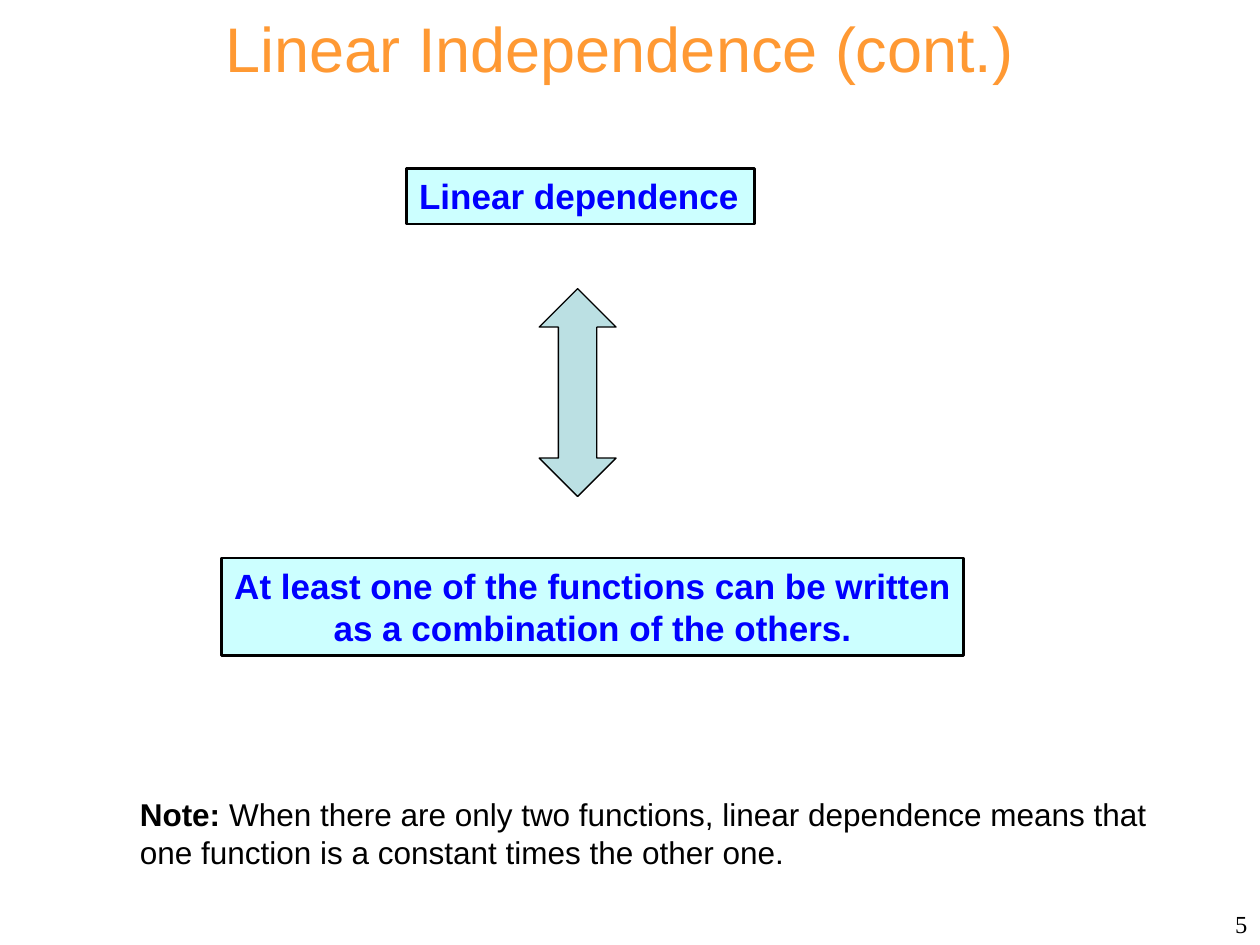
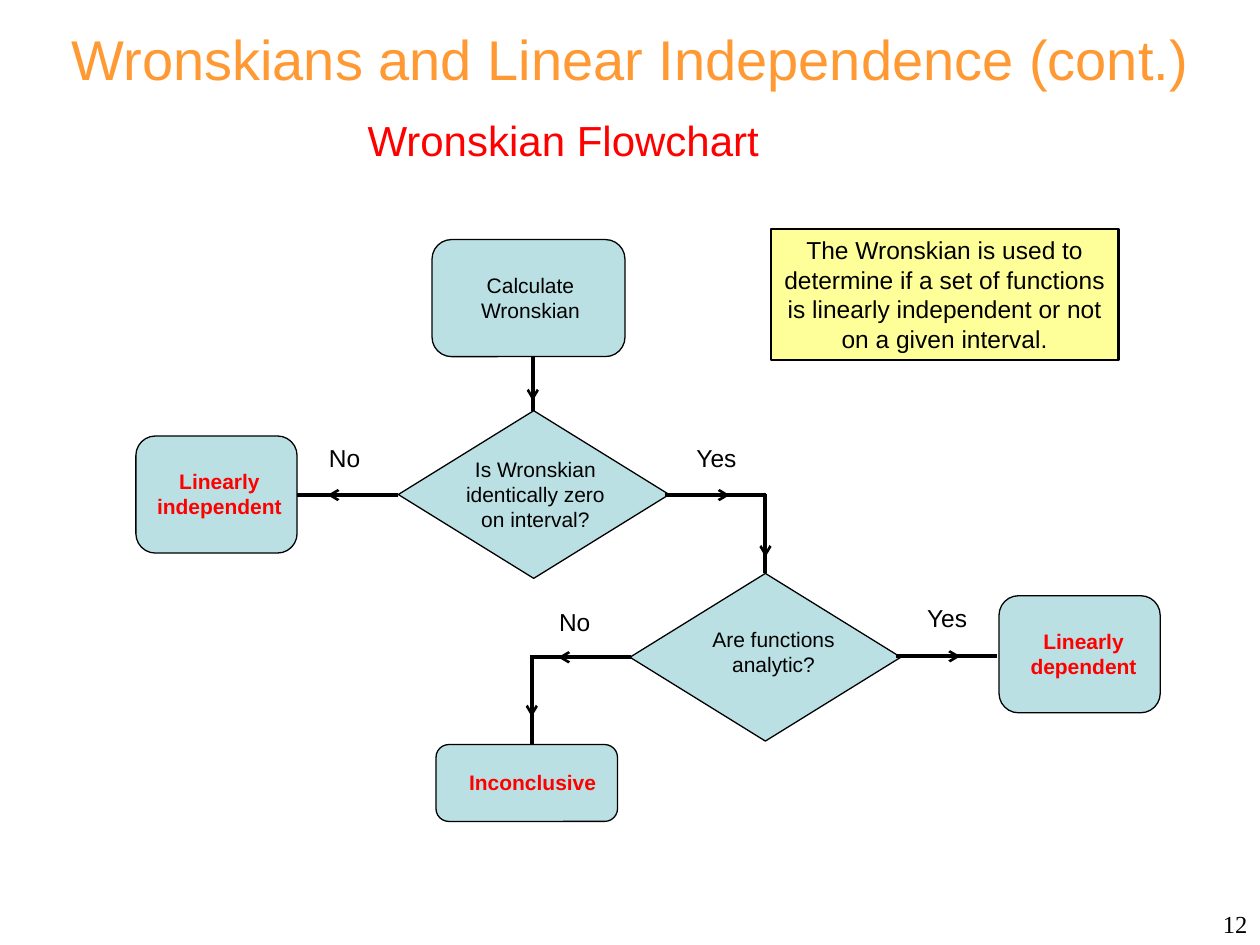
import pptx
import pptx.dml.color
import pptx.enum.shapes
import pptx.enum.text
import pptx.oxml.ns
import pptx.util
from dataclasses import dataclass
from lxml import etree
from typing import NamedTuple

Cm = pptx.util.Cm
Pt = pptx.util.Pt
Kind = pptx.enum.shapes.MSO_SHAPE
Align = pptx.enum.text.PP_ALIGN
Anchor = pptx.enum.text.MSO_ANCHOR
Fit = pptx.enum.text.MSO_AUTO_SIZE
qn = pptx.oxml.ns.qn

ORANGE = "FF9933"
BLACK = "000000"
RED = "FF0000"
BLUE = "0000FF"
TEAL = "BBE0E3"
CYAN = "CCFFFF"
YELLOW = "FFFF99"


class Box(NamedTuple):
    """Left, top, width and height in centimetres."""
    x: float
    y: float
    w: float
    h: float

    def place(self) -> tuple:
        return tuple(Cm(side) for side in self)


@dataclass
class Style:
    size: float
    color: str = BLACK
    bold: bool = False
    font: str = "Arial"
    align: Align = Align.LEFT
    wrap: bool = True


TITLE = Style(36, ORANGE, align=Align.CENTER)
LONG = Style(32, ORANGE, align=Align.CENTER)
HEAD = Style(24, RED, wrap=False)
FOOT = Style(14, font="Times New Roman", align=Align.RIGHT)
TERM = Style(20, BLUE, True, wrap=False)
CLAIM = Style(20, BLUE, True, align=Align.CENTER)
NOTE = Style(18)
STEP = Style(12, align=Align.CENTER)
RESULT = Style(12, RED, True, align=Align.CENTER)
BRANCH = Style(14, wrap=False)
REMARK = Style(14, align=Align.CENTER)


@dataclass
class Node:
    kind: Kind
    box: Box
    text: str
    area: Box
    style: Style


class Link(NamedTuple):
    """A line with a short arrow that begins `lead` after its start."""
    x1: float
    y1: float
    x2: float
    y2: float
    lead: float


STEM = 0.89
ROUND = Kind.FLOWCHART_ALTERNATE_PROCESS
TEST = Kind.FLOWCHART_DECISION

NODES = [
    Node(ROUND, Box(8.71, 4.83, 3.89, 2.36), "Calculate Wronskian",
         Box(9.02, 5.36, 3.35, 1.27), STEP),
    Node(TEST, Box(8.03, 8.28, 5.46, 3.38),
         "Is Wronskian identically zero on interval?",
         Box(9.12, 9.07, 3.35, 1.8), STEP),
    Node(TEST, Box(12.7, 11.56, 5.46, 3.38), "Are functions analytic?",
         Box(13.92, 12.5, 3.35, 1.27), STEP),
    Node(ROUND, Box(2.74, 8.79, 3.25, 2.36), "Linearly independent",
         Box(2.9, 9.32, 3.05, 1.27), RESULT),
    Node(ROUND, Box(20.14, 12.01, 3.25, 2.36), "Linearly dependent",
         Box(20.32, 12.55, 3.05, 1.27), RESULT),
    Node(ROUND, Box(8.79, 15.01, 3.66, 1.55), "Inconclusive",
         Box(9.09, 15.39, 3.3, 0.76), RESULT),
]

LINKS = [
    Link(10.74, 7.19, 10.74, 8.28, 0),
    Link(8.03, 9.98, 5.99, 9.98, 0.54),
    Link(13.41, 9.98, 15.44, 9.98, 0.41),
    Link(15.43, 9.96, 15.43, 11.56, 0.38),
    Link(18.06, 13.23, 20.09, 13.23, 0.41),
    Link(12.73, 13.25, 10.69, 13.25, 0.59),
    Link(10.72, 13.23, 10.72, 14.99, 0.33),
]

BRANCHES = [
    ("No", Box(6.38, 8.81, 1.14, 0.86)),
    ("Yes", Box(13.79, 8.81, 1.32, 0.86)),
    ("No", Box(11.02, 12.12, 1.14, 0.86)),
    ("Yes", Box(18.44, 12.04, 1.32, 0.86)),
]


def rgb(code: str) -> pptx.dml.color.RGBColor:
    return pptx.dml.color.RGBColor.from_string(code)


def write(shape, text: str, style: Style, lead: str = "") -> None:
    """Fill a shape with one paragraph, after an optional bold lead."""
    frame = shape.text_frame
    frame.word_wrap = style.wrap
    frame.auto_size = Fit.NONE
    para = frame.paragraphs[0]
    para.text = lead
    para.add_run().text = text
    para.alignment = style.align
    for run in para.runs:
        run.font.name = style.font
        run.font.size = Pt(style.size)
        run.font.bold = style.bold
        run.font.color.rgb = rgb(style.color)
    if lead:
        para.runs[0].font.bold = True


def add_text(slide, box: Box, text: str, style: Style, lead: str = "") -> None:
    write(slide.shapes.add_textbox(*box.place()), text, style, lead)


def add_shape(slide, kind: Kind, box: Box, fill: str, width: float = 0.75):
    shape = slide.shapes.add_shape(kind, *box.place())
    shape.shadow.inherit = False
    shape.fill.solid()
    shape.fill.fore_color.rgb = rgb(fill)
    shape.line.color.rgb = rgb(BLACK)
    shape.line.width = Pt(width)
    return shape


def add_panel(slide, box: Box, fill: str, text: str, style: Style) -> None:
    shape = add_shape(slide, Kind.RECTANGLE, box, fill, 1.5)
    write(shape, text, style)
    shape.text_frame.vertical_anchor = Anchor.TOP


def add_line(slide, ends: tuple, width: float, arrow: bool = False) -> None:
    line = slide.shapes.add_connector(
        pptx.enum.shapes.MSO_CONNECTOR.STRAIGHT, *(Cm(end) for end in ends))
    line.line.color.rgb = rgb(BLACK)
    line.line.width = Pt(width)
    props = line.element.spPr
    if arrow:
        etree.SubElement(props.get_or_add_ln(), qn("a:tailEnd"), type="arrow")
    etree.SubElement(props, qn("a:effectLst"))


def add_link(slide, link: Link) -> None:
    x1, y1, x2, y2, lead = link
    size = abs(x2 - x1) + abs(y2 - y1)
    dx, dy = (x2 - x1) / size, (y2 - y1) / size
    stop = lead + STEM
    add_line(slide, (x1, y1, x2, y2), 2.25)
    add_line(slide, (x1 + dx * lead, y1 + dy * lead,
                     x1 + dx * stop, y1 + dy * stop), 1.5, True)


def add_node(slide, node: Node) -> None:
    add_shape(slide, node.kind, node.box, TEAL)
    add_text(slide, node.area, node.text, node.style)


def add_slide(deck, title: str, box: Box, style: Style, number: int):
    slide = deck.slides.add_slide(deck.slide_layouts[5])
    head = slide.shapes.title
    head.left, head.top, head.width, head.height = box.place()
    write(head, title, style)
    head.text_frame.vertical_anchor = Anchor.MIDDLE
    add_text(slide, Box(19.48, 18.21, 5.92, 0.84), str(number), FOOT)
    return slide


def add_meaning(deck) -> None:
    slide = add_slide(deck, "Linear Independence (cont.)",
                      Box(1.7, 0, 21.59, 1.9), TITLE, 5)
    add_panel(slide, Box(8.2, 3.4, 7.01, 1.12), CYAN,
              "Linear dependence", TERM)
    add_shape(slide, Kind.UP_DOWN_ARROW, Box(10.87, 5.82, 1.55, 4.19), TEAL)
    add_panel(slide, Box(4.47, 11.25, 14.96, 1.96), CYAN,
              "At least one of the functions can be written "
              "as a combination of the others.", CLAIM)
    add_text(slide, Box(2.57, 15.9, 21.41, 1.8),
             " When there are only two functions, linear dependence means "
             "that one function is a constant times the other one.",
             NOTE, "Note:")


def add_flow(deck) -> None:
    slide = add_slide(deck, "Wronskians and Linear Independence (cont.)",
                      Box(0.43, 0, 24.56, 2.34), LONG, 12)
    add_text(slide, Box(7.16, 2.18, 8.48, 1.27), "Wronskian Flowchart", HEAD)
    for node in NODES:
        add_node(slide, node)
    for link in LINKS:
        add_link(slide, link)
    for word, box in BRANCHES:
        add_text(slide, box, word, BRANCH)
    add_panel(slide, Box(15.54, 4.62, 7.01, 2.64), YELLOW,
              "The Wronskian is used to determine if a set of functions is "
              "linearly independent or not on a given interval.", REMARK)


def main() -> None:
    deck = pptx.Presentation()
    deck.slide_width, deck.slide_height = Cm(25.4), Cm(19.05)
    add_meaning(deck)
    add_flow(deck)
    deck.save("out.pptx")


if __name__ == "__main__":
    main()
